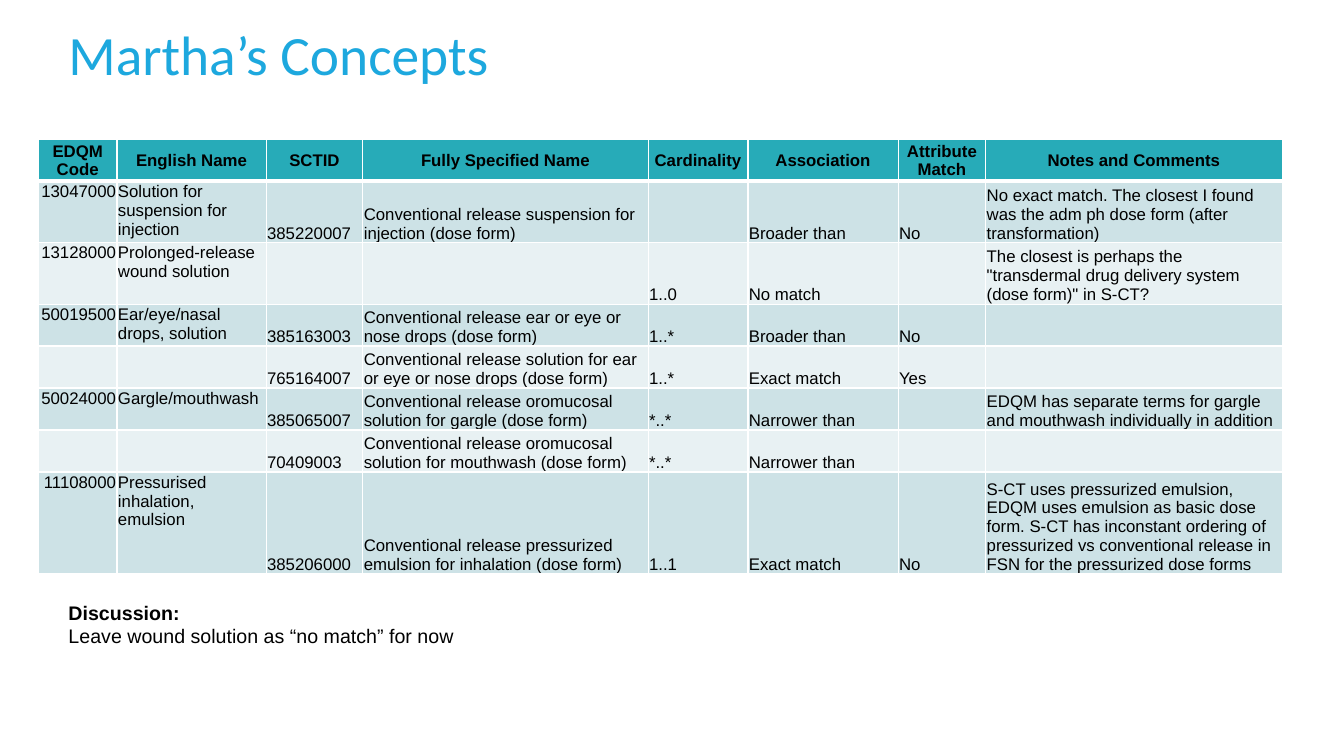
"""Build the slide with a concept mapping table and a discussion note."""
from dataclasses import dataclass, field
from typing import Any

import lxml.etree
import pptx
import pptx.dml.color
import pptx.enum.text
import pptx.oxml.ns
import pptx.slide
import pptx.table
import pptx.text.text
import pptx.util

Pt = pptx.util.Pt
ALIGN = pptx.enum.text.PP_ALIGN
ANCHOR = pptx.enum.text.MSO_ANCHOR

COLORS = {
    "title": "1DA8DE",
    "text": "000000",
    "header": "27ABB8",
    "odd_row": "CDE2E6",
    "even_row": "E8F1F3",
    "border": "FFFFFF",
}


@dataclass(frozen=True)
class Line:
    text: str
    font: dict[str, Any]
    color: str = "text"
    layout: dict[str, Any] = field(default_factory=dict)


@dataclass(frozen=True)
class TextBox:
    bounds: tuple[float, float, float, float]
    lines: list[Line]
    anchor: Any = ANCHOR.TOP


@dataclass(frozen=True)
class Column:
    header: str
    width: float
    alignment: Any = ALIGN.LEFT
    anchor: Any = ANCHOR.BOTTOM


TEXT_BOXES = [
    TextBox(
        (41.8, 16.6, 828, 49),
        [Line("Martha’s Concepts", {"name": "Calibri", "size": Pt(39.6)}, "title", {"line_spacing": 0.9})],
        ANCHOR.MIDDLE,
    ),
    TextBox(
        (41.8, 425.5, 860.4, 58.3),
        [
            Line("Discussion:", {"name": "Arial", "size": Pt(14), "bold": True}),
            Line("Leave wound solution as “no match” for now", {"name": "Arial", "size": Pt(14), "bold": False}),
        ],
    ),
]

COLUMNS = [
    Column("EDQM Code", 56.2, ALIGN.RIGHT, ANCHOR.TOP),
    Column("English Name", 106.5, anchor=ANCHOR.TOP),
    Column("SCTID", 69.1),
    Column("Fully Specified Name", 203.8),
    Column("Cardinality", 71.3),
    Column("Association", 107.3),
    Column("Attribute Match", 62.6),
    Column("Notes and Comments", 211.7),
]

CONCEPTS = [
    ("13047000", "Solution for suspension for injection", "385220007",
     "Conventional release suspension for injection (dose form)", "", "Broader than", "No",
     "No exact match. The closest I found was the adm ph dose form (after transformation)"),
    ("13128000", "Prolonged-release wound solution", "", "", "1..0", "No match", "",
     'The closest is perhaps the "transdermal drug delivery system (dose form)" in S-CT?'),
    ("50019500", "Ear/eye/nasal drops, solution", "385163003",
     "Conventional release ear or eye or nose drops (dose form)", "1..*", "Broader than", "No", ""),
    ("", "", "765164007",
     "Conventional release solution for ear or eye or nose drops (dose form)", "1..*", "Exact match", "Yes", ""),
    ("50024000", "Gargle/mouthwash", "385065007",
     "Conventional release oromucosal solution for gargle (dose form)", "*..*", "Narrower than", "",
     "EDQM has separate terms for gargle and mouthwash individually in addition"),
    ("", "", "70409003",
     "Conventional release oromucosal solution for mouthwash (dose form)", "*..*", "Narrower than", "", ""),
    ("11108000", "Pressurised inhalation, emulsion", "385206000",
     "Conventional release pressurized emulsion for inhalation (dose form)", "1..1", "Exact match", "No",
     "S-CT uses pressurized emulsion, EDQM uses emulsion as basic dose form. S-CT has inconstant "
     "ordering of pressurized vs conventional release in FSN for the pressurized dose forms"),
]

TABLE_BOUNDS = (27.4, 99.4, 888.5, 310.3)
ROW_HEIGHT = 30
CELL_FORMAT = {
    "margin_left": Pt(0.7),
    "margin_top": Pt(0.7),
    "margin_right": Pt(0.7),
    "margin_bottom": Pt(0),
}


def set_attributes(target: Any, values: dict[str, Any]) -> None:
    for name, value in values.items():
        setattr(target, name, value)


def rgb(color: str) -> pptx.dml.color.RGBColor:
    return pptx.dml.color.RGBColor.from_string(COLORS[color])


def write_line(paragraph: Any, line: Line) -> None:
    set_attributes(paragraph, line.layout)
    if line.text:
        run = paragraph.add_run()
        run.text = line.text
        set_attributes(run.font, line.font)
        run.font.color.rgb = rgb(line.color)


def draw_text_box(slide: pptx.slide.Slide, box: TextBox) -> None:
    shape = slide.shapes.add_textbox(*map(Pt, box.bounds))
    frame = shape.text_frame
    set_attributes(frame, {"word_wrap": True, "vertical_anchor": box.anchor})
    for index, line in enumerate(box.lines):
        write_line(frame.add_paragraph() if index else frame.paragraphs[0], line)


def add_borders(cell: Any, widths: dict[str, float]) -> None:
    qn = pptx.oxml.ns.qn
    properties = cell._tc.get_or_add_tcPr()
    for index, (side, width) in enumerate(widths.items()):
        border = lxml.etree.Element(qn(f"a:ln{side}"), w=str(Pt(width)))
        fill = lxml.etree.SubElement(border, qn("a:solidFill"))
        lxml.etree.SubElement(fill, qn("a:srgbClr"), val=COLORS["border"])
        properties.insert(index, border)


def fill_cell(cell: Any, text: str, column: Column, row: int) -> None:
    is_header = row == 0
    set_attributes(cell, CELL_FORMAT)
    cell.vertical_anchor = ANCHOR.MIDDLE if is_header else column.anchor
    cell.fill.solid()
    cell.fill.fore_color.rgb = rgb("header" if is_header else "odd_row" if row % 2 else "even_row")
    add_borders(cell, {"L": 1, "R": 1, "T": 3 if row == 1 else 1, "B": 3 if is_header else 1})
    font = {"name": "Arial", "size": Pt(12), "bold": is_header}
    layout = {"alignment": ALIGN.CENTER if is_header else column.alignment}
    write_line(cell.text_frame.paragraphs[0], Line(text, font, layout=layout))


def draw_table(slide: pptx.slide.Slide) -> None:
    rows = [tuple(column.header for column in COLUMNS), *CONCEPTS]
    shape = slide.shapes.add_table(len(rows), len(COLUMNS), *map(Pt, TABLE_BOUNDS))
    table = shape.table
    for index, column in enumerate(COLUMNS):
        table.columns[index].width = Pt(column.width)
    for row, texts in enumerate(rows):
        table.rows[row].height = Pt(ROW_HEIGHT)
        for index, (text, column) in enumerate(zip(texts, COLUMNS)):
            fill_cell(table.cell(row, index), text, column, row)
    shape.height = Pt(TABLE_BOUNDS[3])


def main() -> None:
    presentation = pptx.Presentation()
    set_attributes(presentation, {"slide_width": Pt(960), "slide_height": Pt(540)})
    slide = presentation.slides.add_slide(presentation.slide_layouts[6])
    title, discussion = TEXT_BOXES
    draw_text_box(slide, title)
    draw_table(slide)
    draw_text_box(slide, discussion)
    presentation.save("out.pptx")


if __name__ == "__main__":
    main()
